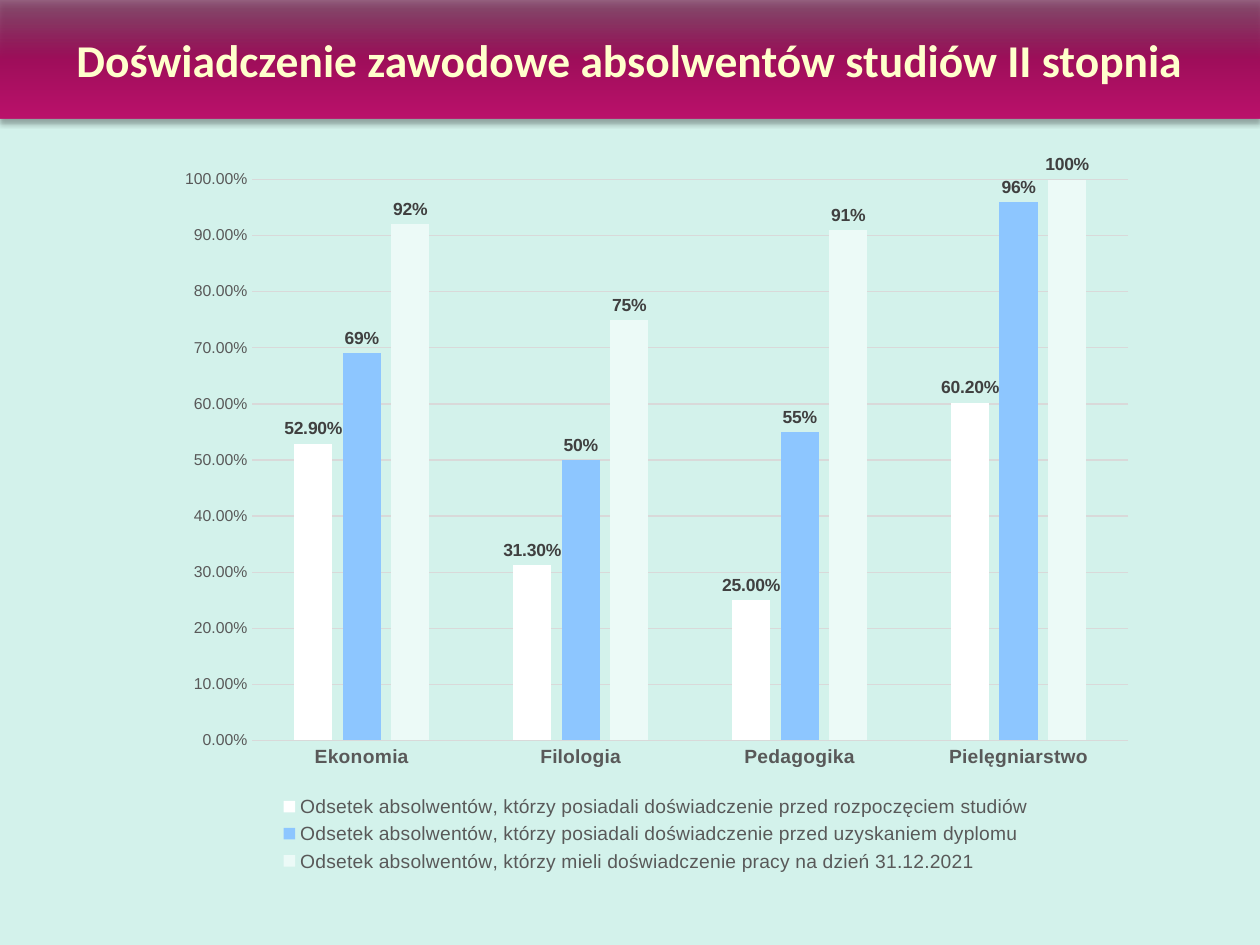
"""Build a slide with a chart of graduates' work experience by field of study."""
from lxml import etree
from pptx import Presentation
from pptx.chart.data import CategoryChartData
from pptx.dml.color import RGBColor
from pptx.enum.chart import XL_CHART_TYPE, XL_LABEL_POSITION, XL_LEGEND_POSITION, XL_TICK_MARK
from pptx.enum.text import MSO_ANCHOR, PP_ALIGN
from pptx.oxml import parse_xml
from pptx.oxml.ns import nsdecls, qn
from pptx.util import Pt

TITLE = "Doświadczenie zawodowe absolwentów studiów II stopnia"
FIELDS = ["Ekonomia", "Filologia", "Pedagogika", "Pielęgniarstwo"]
BACKGROUND = RGBColor(0xD3, 0xF2, 0xEB)
CREAM = RGBColor(0xFF, 0xFF, 0xCC)
GREY = RGBColor(0x59, 0x59, 0x59)
DARK_GREY = RGBColor(0x40, 0x40, 0x40)
GRID_GREY = RGBColor(0xD9, 0xD9, 0xD9)
WHITE = RGBColor(0xFF, 0xFF, 0xFF)
BLUE = RGBColor(0x8D, 0xC6, 0xFF)
MINT = RGBColor(0xEC, 0xFA, 0xF7)
BLACK = RGBColor(0, 0, 0)
SERIES = [
    ("Odsetek absolwentów, którzy posiadali doświadczenie przed rozpoczęciem studiów",
     (0.529, 0.313, 0.25, 0.602), WHITE, "0.00%"),
    ("Odsetek absolwentów, którzy posiadali doświadczenie przed uzyskaniem dyplomu",
     (0.69, 0.5, 0.55, 0.96), BLUE, "0%"),
    ("Odsetek absolwentów, którzy mieli doświadczenie pracy na dzień 31.12.2021",
     (0.92, 0.75, 0.91, 1), MINT, "0%"),
]
BANNER_STOPS = [(0, "6F0A3F", 61), (50, "9E0E5A", 100), (100, "BB116B", 100)]
PLOT_LAYOUT = {"x": 0.09, "y": 0.03, "w": 0.89, "h": 0.78}


def style_font(font, size, color, bold=False, name="Arial"):
    font.name, font.size, font.bold = name, Pt(size), bold
    font.color.rgb = color


def style_line(line, color):
    line.color.rgb = color
    line.width = Pt(0.75)


def add_banner(slide):
    banner = slide.shapes.title
    banner.left, banner.top, banner.width, banner.height = 0, 0, Pt(720), Pt(67.7)
    stops = "".join(
        f'<a:gs pos="{pos * 1000}"><a:srgbClr val="{color}">'
        f'<a:alpha val="{alpha * 1000}"/></a:srgbClr></a:gs>'
        for pos, color, alpha in BANNER_STOPS)
    properties = banner.element.spPr
    properties.append(parse_xml(
        f'<a:gradFill {nsdecls("a")} rotWithShape="1"><a:gsLst>{stops}</a:gsLst>'
        '<a:lin ang="5400000" scaled="0"/></a:gradFill>'))
    banner.line.fill.background()
    properties.append(parse_xml(
        f'<a:effectLst {nsdecls("a")}><a:outerShdw blurRad="{Pt(3.5)}" dist="{Pt(2.2)}" '
        'dir="5400000" rotWithShape="0"><a:srgbClr val="000000"><a:alpha val="32000"/>'
        '</a:srgbClr></a:outerShdw></a:effectLst>'))
    frame = banner.text_frame
    frame.text = TITLE
    frame.word_wrap = True
    frame.vertical_anchor = MSO_ANCHOR.MIDDLE
    heading = frame.paragraphs[0]
    heading.alignment = PP_ALIGN.CENTER
    style_font(heading.runs[0].font, 26, CREAM, True, "Calibri")


def place_plot(chart):
    plot_area = chart.element.find(".//" + qn("c:plotArea"))
    for old in plot_area.findall(qn("c:layout")):
        plot_area.remove(old)
    layout = parse_xml(f'<c:layout {nsdecls("c")}><c:manualLayout/></c:layout>')
    settings = {"layoutTarget": "inner", "xMode": "edge", "yMode": "edge", **PLOT_LAYOUT}
    for tag, value in settings.items():
        etree.SubElement(layout[0], qn("c:" + tag)).set("val", str(value))
    plot_area.insert(0, layout)


def add_experience_chart(slide):
    data = CategoryChartData(number_format="0.00%")
    data.categories = FIELDS
    for name, shares, _, _ in SERIES:
        data.add_series(name, shares)
    chart = slide.shapes.add_chart(XL_CHART_TYPE.COLUMN_CLUSTERED, Pt(93.6), Pt(88.6),
                                   Pt(562.3), Pt(412.6), data).chart
    style_font(chart.font, 10, BLACK)
    chart.has_title = False
    chart.has_legend = True
    chart.legend.position = XL_LEGEND_POSITION.BOTTOM
    chart.legend.include_in_layout = False
    style_font(chart.legend.font, 11, GREY)
    place_plot(chart)

    fields, shares = chart.category_axis, chart.value_axis
    for axis, size, bold in ((fields, 11, True), (shares, 9, False)):
        axis.major_tick_mark = axis.minor_tick_mark = XL_TICK_MARK.NONE
        style_font(axis.tick_labels.font, size, GREY, bold)
    style_line(fields.format.line, GRID_GREY)
    shares.format.line.fill.background()
    shares.minimum_scale, shares.maximum_scale, shares.major_unit = 0, 1, 0.1
    shares.has_major_gridlines = True
    style_line(shares.major_gridlines.format.line, GRID_GREY)
    shares.tick_labels.number_format = "0.00%"
    shares.tick_labels.number_format_is_linked = False

    plot = chart.plots[0]
    plot.gap_width, plot.overlap, plot.vary_by_categories = 219, -27, False
    for bars, (_, _, color, number_format) in zip(plot.series, SERIES):
        bars.format.fill.solid()
        bars.format.fill.fore_color.rgb = color
        labels = bars.data_labels
        labels.show_value = True
        labels.position = XL_LABEL_POSITION.OUTSIDE_END
        labels.number_format = number_format
        labels.number_format_is_linked = False
        style_font(labels.font, 10, DARK_GREY, True)


def main():
    presentation = Presentation()
    presentation.slide_width, presentation.slide_height = Pt(720), Pt(540)
    slide = presentation.slides.add_slide(presentation.slide_layouts[5])
    slide.background.fill.solid()
    slide.background.fill.fore_color.rgb = BACKGROUND
    add_banner(slide)
    add_experience_chart(slide)
    presentation.save("out.pptx")


if __name__ == "__main__":
    main()
